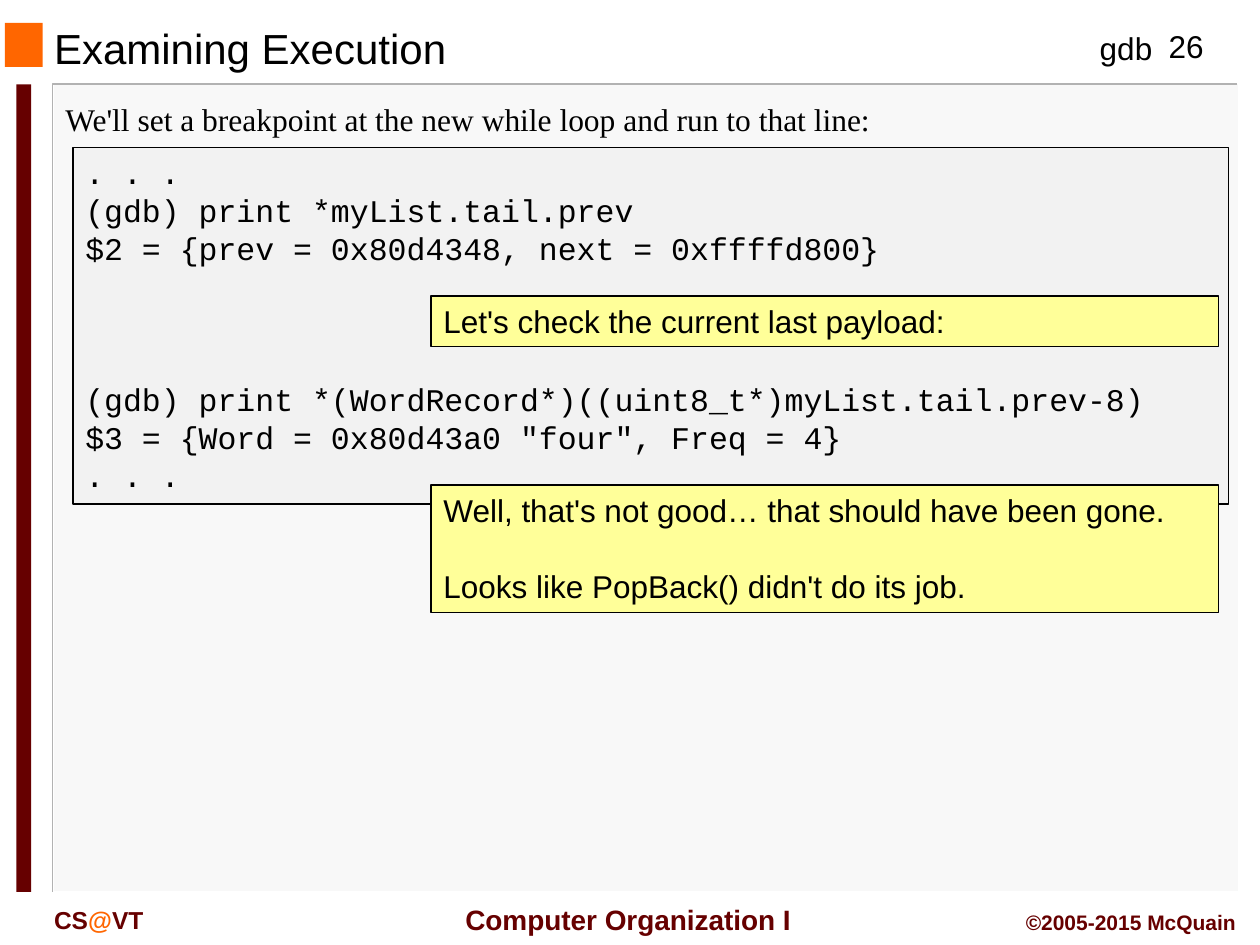
import pptx
import pptx.dml.color
import pptx.enum.shapes
import pptx.enum.text
import pptx.util

Cm = pptx.util.Cm
Pt = pptx.util.Pt
ALIGN = pptx.enum.text.PP_ALIGN
ANCHOR = pptx.enum.text.MSO_ANCHOR

COLORS = {
    "ink": "000000", "panel": "F8F8F8", "edge": "B2B2B2", "light": "FFFFFF",
    "orange": "FF6600", "maroon": "660000", "code": "F2F2F2", "note": "FFFF99",
}
LEADING = 1.2  # line height as a multiple of the text size


def color(name):
    return pptx.dml.color.RGBColor.from_string(COLORS[name])


def add_block(slide, box, fill, outlined=False):
    block = slide.shapes.add_shape(
        pptx.enum.shapes.MSO_SHAPE.RECTANGLE, *map(Cm, box))
    block.shadow.inherit = False
    block.fill.solid()
    block.fill.fore_color.rgb = color(fill)
    if outlined:
        block.line.color.rgb = color("ink")
        block.line.width = Pt(0.75)
    else:
        block.line.fill.background()
    return block


def write(shape, lines, size=18, font="Arial", ink="ink", bold=False,
          align=ALIGN.LEFT, anchor=ANCHOR.TOP, wrap=True, gaps=None):
    """Fill a shape with text; gaps maps a line index to skipped lines above it."""
    frame = shape.text_frame
    frame.word_wrap = wrap
    frame.vertical_anchor = anchor
    frame.text = "\n".join(lines)
    for index, paragraph in enumerate(frame.paragraphs):
        paragraph.alignment = align
        paragraph.line_spacing = Pt(size * LEADING)
        paragraph.space_before = Pt((gaps or {}).get(index, 0) * size * LEADING)
        for run in paragraph.runs:
            run.font.size = Pt(size)
            run.font.name = font
            run.font.bold = bold
            run.font.color.rgb = color(ink)
    return frame


def add_label(slide, box, text, **style):
    label = slide.shapes.add_textbox(*map(Cm, box))
    return write(label, [text], **style)


def add_edge(slide, points, ink):
    (start_x, start_y), *rest = [(Cm(x), Cm(y)) for x, y in points]
    builder = slide.shapes.build_freeform(start_x, start_y)
    builder.add_line_segments(rest, close=False)
    edge = builder.convert_to_shape()
    edge.shadow.inherit = False
    edge.fill.background()
    edge.line.color.rgb = color(ink)
    edge.line.width = Pt(1)


def add_panel(slide, box):
    left, top, width, height = box
    right, bottom = left + width, top + height
    add_block(slide, box, "panel")
    # Grey edge on the top left, white edge on the bottom right
    add_edge(slide, [(right - 0.03, top), (left - 0.03, top),
                     (left - 0.03, bottom)], "edge")
    add_edge(slide, [(right, top), (right, bottom), (left, bottom)], "light")
    # Maroon bar in the margin
    add_block(slide, (left - 0.76, top, 0.3, height), "maroon")


def add_header(slide, box, title, topic, number):
    left, top, width, height = box
    right = left + width
    add_block(slide, (left, top, 0.76, 0.89), "orange")
    add_label(slide, (left + 0.74, top + 0.02, 16.08, 0.97), title,
              size=24, anchor=ANCHOR.MIDDLE)
    add_label(slide, (right - 2.84, top, 1.57, height), topic, wrap=False)
    add_label(slide, (right - 1.7, top - 0.03, 1.7, height), number,
              align=ALIGN.CENTER)


def add_footer(slide, box, course, owner):
    left, top, width, height = box
    style = {"ink": "maroon", "bold": True}
    school = add_label(slide, (left, top + 0.05, 3.81, 0.84), "CS",
                       size=14, **style).paragraphs[0]
    for text, ink in (("@", "orange"), ("VT", "maroon")):
        run = school.add_run()
        run.text = text
        run.font.size = Pt(14)
        run.font.name = "Arial"
        run.font.bold = True
        run.font.color.rgb = color(ink)
    add_label(slide, (left + 8.13, top, 7.39, height), course, size=16,
              align=ALIGN.CENTER, anchor=ANCHOR.MIDDLE, **style)
    add_label(slide, (left + width - 5.28, top + 0.15, 5.28, 0.76), owner,
              size=12, align=ALIGN.RIGHT, **style)


def add_session(slide, box):
    left, top, width, height = box
    # Debugger transcript
    transcript = add_block(slide, box, "code", outlined=True)
    write(transcript, [
        ". . .",
        "(gdb) print *myList.tail.prev",
        "$2 = {prev = 0x80d4348, next = 0xffffd800}",
        "(gdb) print *(WordRecord*)((uint8_t*)myList.tail.prev-8)",
        '$3 = {Word = 0x80d43a0 "four", Freq = 4}',
        ". . .",
    ], font="Courier New", gaps={3: 3})
    # Remarks over the transcript: offset from its top, height, lines
    remarks = [
        (3, 1.02, ["Let's check the current last payload:"]),
        (6.81, 2.57, ["Well, that's not good… that should have been gone.",
                      "Looks like PopBack() didn't do its job."]),
    ]
    for offset, remark_height, lines in remarks:
        remark = add_block(slide, (left + 7.22, top + offset, 15.88, remark_height),
                           "note", outlined=True)
        write(remark, lines, gaps={1: 1})


def main():
    deck = pptx.Presentation()
    deck.slide_width, deck.slide_height = Cm(25.4), Cm(19.05)
    slide = deck.slides.add_slide(deck.slide_layouts[6])

    add_panel(slide, (1.09, 1.7, 23.88, 16.28))
    add_header(slide, (0.1, 0.46, 24.66, 1.02), "Examining Execution", "gdb", "26")
    add_footer(slide, (0.84, 18.06, 24.33, 0.94),
               "Computer Organization I", "©2005-2015 McQuain")
    add_label(slide, (1.07, 1.9, 23.93, 1.02),
              "We'll set a breakpoint at the new while loop and run to that line:",
              font="Times New Roman")
    add_session(slide, (1.47, 2.97, 23.29, 7.19))

    deck.save("out.pptx")


if __name__ == "__main__":
    main()
